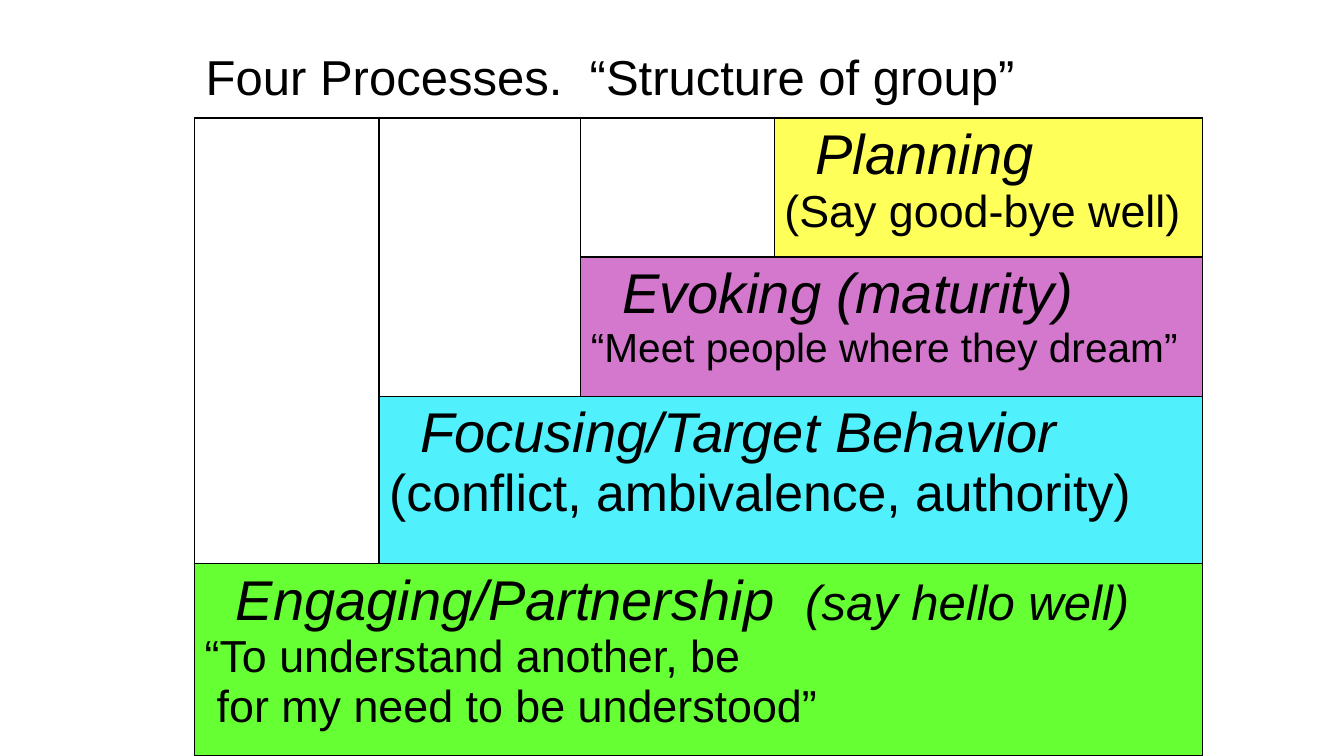
from lxml import etree
from pptx import Presentation
from pptx.dml.color import RGBColor
from pptx.enum.text import MSO_ANCHOR, MSO_AUTO_SIZE, PP_ALIGN
from pptx.oxml.ns import qn
from pptx.util import Inches, Pt

LEFT = PP_ALIGN.LEFT
MIDDLE = MSO_ANCHOR.MIDDLE
TOP = MSO_ANCHOR.TOP
NO_FIT = MSO_AUTO_SIZE.NONE
BLACK = RGBColor(0x00, 0x00, 0x00)
WHITE = RGBColor(0xFF, 0xFF, 0xFF)
YELLOW = RGBColor(0xFF, 0xFF, 0x59)
ORCHID = RGBColor(0xD4, 0x78, 0xCD)
CYAN = RGBColor(0x50, 0xF0, 0xFC)
GREEN = RGBColor(0x66, 0xFF, 0x33)
FONT = "Arial"
TITLE_BOX = (2, 0.17, 8.83, 1.25)
STEPS_BOX = (1.93, 1.17, 10, 6.33)
COLUMN_SHARES = (1.83, 2, 1.92, 4.25)
ROW_SHARES = (1.38, 1.38, 1.66, 1.91)
CELL_MARGIN = 0.06
BODY_INDENT = 0.04
QUOTE_INDENT = 0.16
HEADING_INDENT = 0.35

STEPS = [
    (YELLOW, [
        (HEADING_INDENT, [("Planning", 40, True)]),
        (BODY_INDENT, [("(Say good-bye well)", 32, False)]),
    ]),
    (ORCHID, [
        (HEADING_INDENT, [("Evoking (maturity)", 40, True)]),
        (BODY_INDENT, [("“Meet people where they dream”", 29, False)]),
    ]),
    (CYAN, [
        (HEADING_INDENT, [("Focusing/Target Behavior", 40, True)]),
        (BODY_INDENT, [("(conflict, ambivalence, authority)", 37, False)]),
    ]),
    (GREEN, [
        (HEADING_INDENT, [("Engaging/Partnership  ", 40, True), ("(say hello well)", 35, True)]),
        (BODY_INDENT, [("“To understand another, be", 32, False)]),
        (QUOTE_INDENT, [("for my need to be understood”", 32, False)]),
    ]),
]


def write_paragraph(para, indent, spans):
    para.alignment = LEFT
    properties = para._p.get_or_add_pPr()
    properties.set("marL", "0")
    properties.set("indent", str(Inches(indent)))
    for text, size, italic in spans:
        span = para.add_run()
        span.text = text
        span.font.name = FONT
        span.font.size = Pt(size)
        span.font.italic = italic
        span.font.color.rgb = BLACK


def set_margins(target, margin):
    target.margin_left = target.margin_right = Inches(margin)
    target.margin_top = target.margin_bottom = Inches(margin)


def style_cell(cell, color):
    properties = cell._tc.get_or_add_tcPr()
    for side in ("a:lnL", "a:lnR", "a:lnT", "a:lnB"):
        line = etree.SubElement(properties, qn(side), w=str(Pt(1)))
        fill = etree.SubElement(line, qn("a:solidFill"))
        etree.SubElement(fill, qn("a:srgbClr"), val=str(BLACK))
    cell.fill.solid()
    cell.fill.fore_color.rgb = color
    cell.vertical_anchor = TOP
    set_margins(cell, CELL_MARGIN)


def add_title(page, box):
    title = page.shapes.title
    title.left, title.top, title.width, title.height = map(Inches, box)
    frame = title.text_frame
    frame.word_wrap = True
    frame.auto_size = NO_FIT
    frame.vertical_anchor = MIDDLE
    set_margins(frame, 0)
    para = frame.paragraphs[0]
    para.line_spacing = 0.9
    write_paragraph(para, BODY_INDENT, [("Four Processes.  “Structure of group”", 35, False)])


def add_steps(page, box):
    left, top, width, height = box
    count = len(STEPS)
    last = count - 1
    table = page.shapes.add_table(count, count, *map(Inches, box)).table
    table.first_row = False
    table.horz_banding = False
    for column, share in zip(table.columns, COLUMN_SHARES):
        column.width = Inches(width * share / sum(COLUMN_SHARES))
    for row, share in zip(table.rows, ROW_SHARES):
        row.height = Inches(height * share / sum(ROW_SHARES))

    for row, (color, paragraphs) in enumerate(STEPS):
        start = last - row
        for column in range(count):
            style_cell(table.cell(row, column), color if column >= start else WHITE)
        step = table.cell(row, start)
        if start < last:
            step.merge(table.cell(row, last))
        for index, (indent, spans) in enumerate(paragraphs):
            frame = step.text_frame
            para = frame.add_paragraph() if index else frame.paragraphs[0]
            write_paragraph(para, indent, spans)

    for column in range(last - 1):
        table.cell(0, column).merge(table.cell(last - 1 - column, column))


def main():
    deck = Presentation()
    deck.slide_width = Inches(13.33)
    deck.slide_height = Inches(7.5)
    page = deck.slides.add_slide(deck.slide_layouts[5])
    add_title(page, TITLE_BOX)
    add_steps(page, STEPS_BOX)
    deck.save("out.pptx")


if __name__ == "__main__":
    main()
